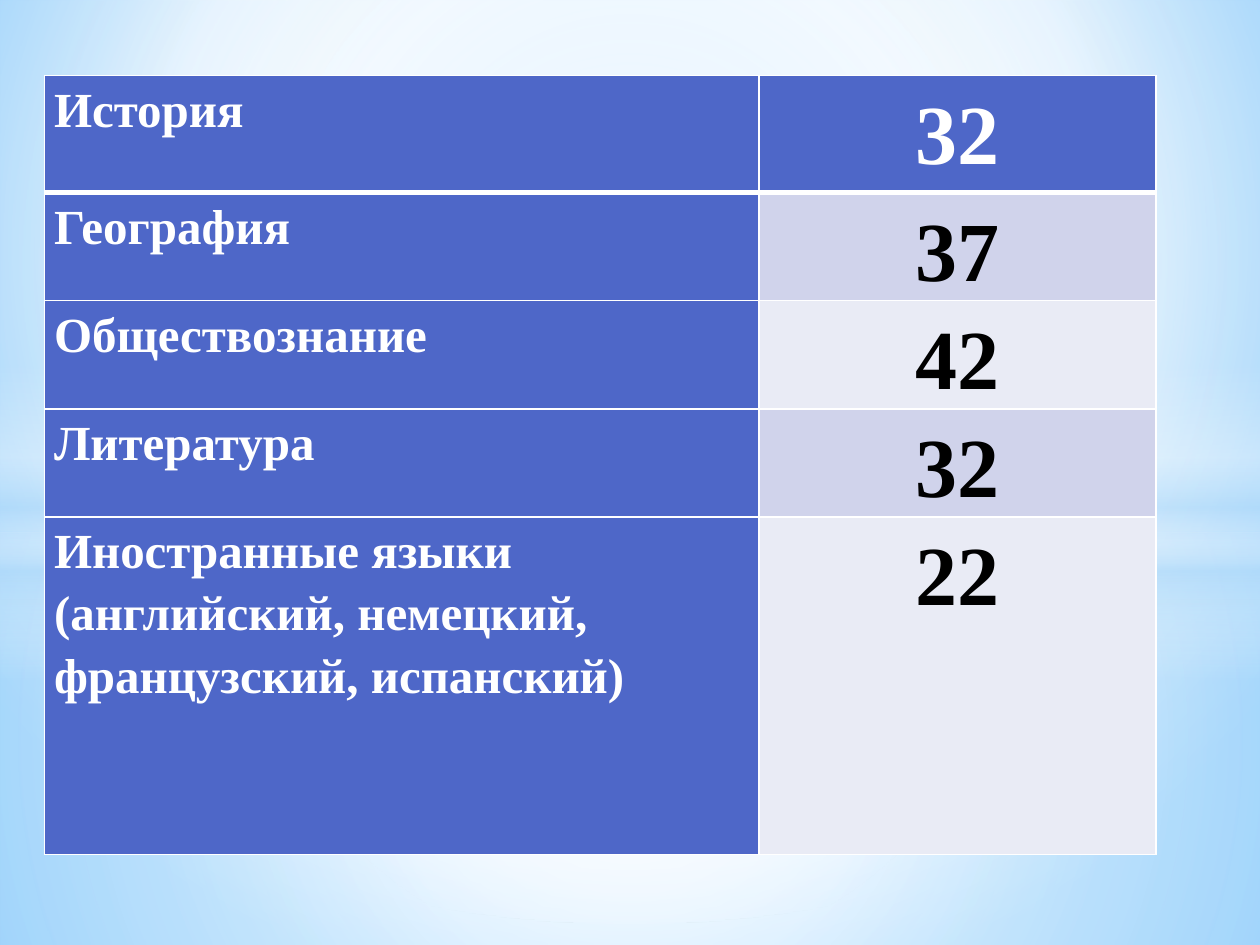
from lxml.etree import SubElement
from pptx import Presentation
from pptx.dml.color import RGBColor
from pptx.enum.shapes import MSO_SHAPE as SHAPE
from pptx.enum.text import PP_ALIGN as ALIGN
from pptx.oxml import parse_xml
from pptx.oxml.ns import nsdecls, qn
from pptx.util import Cm, Pt

WHITE = RGBColor(0xFF, 0xFF, 0xFF)
BLACK = RGBColor(0x00, 0x00, 0x00)
INDIGO = RGBColor(0x4E, 0x67, 0xC8)
LILAC = RGBColor(0xD0, 0xD3, 0xEB)
PALE = RGBColor(0xE9, 0xEB, 0xF5)
SKY = RGBColor(0x9E, 0xD5, 0xFF)
AZURE = RGBColor(0x5B, 0xB9, 0xFF)
MIST = RGBColor(0xB4, 0xDC, 0xFA)

CENTER = (50, 50, 50, 50)
WIDTH, HEIGHT = 25.4, 19.05
SUBJECTS = [
    ("История", "32", 2.36),
    ("География", "37", 2.18),
    ("Обществознание", "42", 2.18),
    ("Литература", "32", 2.18),
    ("Иностранные языки (английский, немецкий, французский, испанский)", "22", 6.81),
]


class Deck:
    """Holds the text style and the current slide."""

    font = {"name": "Times New Roman", "bold": True}
    margins = {"margin_left": Cm(0.19), "margin_right": Cm(0.19),
               "margin_top": 0, "margin_bottom": 0}

    def __init__(self):
        self.prs = Presentation()
        self.prs.slide_width, self.prs.slide_height = Cm(WIDTH), Cm(HEIGHT)
        self.s = self.prs.slides.add_slide(self.prs.slide_layouts[6])

    def gradient(self, fill, parent, stops, focus=None):
        fill.background()
        grad = parse_xml(f'<a:gradFill {nsdecls("a")} rotWithShape="1"/>')
        stop_list = SubElement(grad, qn("a:gsLst"))
        for pos, color, alpha in stops:
            stop = SubElement(stop_list, qn("a:gs"), pos=str(pos * 1000))
            rgb = SubElement(stop, qn("a:srgbClr"), val=str(color))
            if alpha < 100:
                SubElement(rgb, qn("a:alpha"), val=str(alpha * 1000))
        if focus:
            shade = SubElement(grad, qn("a:path"), path="circle")
            sides = {side: str(v * 1000) for side, v in zip("ltrb", focus)}
            SubElement(shade, qn("a:fillToRect"), **sides)
        else:
            SubElement(grad, qn("a:lin"), ang="5400000", scaled="0")
        parent.replace(parent.find(qn("a:noFill")), grad)

    def background(self, stops, focus):
        fill = self.s.background.fill
        fill.background()
        self.gradient(fill, self.s.element.find(".//" + qn("p:bgPr")), stops, focus)

    def glow(self, kind, top, height, stops, focus=None):
        sp = self.s.shapes.add_shape(kind, 0, Cm(top), Cm(WIDTH), Cm(height))
        sp.shadow.inherit = False
        sp.line.fill.background()
        self.gradient(sp.fill, sp.element.spPr, stops, focus)

    def cell(self, cell, text, size, color, fill, align, bottom, top):
        for name, value in self.margins.items():
            setattr(cell, name, value)
        p = cell.text_frame.paragraphs[0]
        p.alignment, p.line_spacing = align, 1.15
        r = p.add_run()
        r.text = text
        for name, value in {**self.font, "size": Pt(size)}.items():
            setattr(r.font, name, value)
        r.font.color.rgb = color
        tc_pr = cell._tc.get_or_add_tcPr()
        for side, width in {"L": 1, "R": 1, "T": top, "B": bottom}.items():
            ln = SubElement(tc_pr, qn(f"a:ln{side}"), w=str(Pt(width)))
            solid = SubElement(ln, qn("a:solidFill"))
            SubElement(solid, qn("a:srgbClr"), val=str(WHITE))
        cell.fill.solid()
        cell.fill.fore_color.rgb = fill

    def table(self, left, top, widths, rows):
        height = sum(row[2] for row in rows)
        table = self.s.shapes.add_table(len(rows), len(widths), Cm(left), Cm(top),
                                        Cm(sum(widths)), Cm(height)).table
        for col, width in zip(table.columns, widths):
            col.width = Cm(width)
        for i, (subject, score, row_height) in enumerate(rows):
            table.rows[i].height = Cm(row_height)
            bottom, upper = (3 if i == 0 else 1), (3 if i == 1 else 1)
            band = INDIGO if i == 0 else (LILAC if i % 2 else PALE)
            self.cell(table.cell(i, 0), subject, 28, WHITE, INDIGO, ALIGN.LEFT, bottom, upper)
            self.cell(table.cell(i, 1), score, 48, BLACK if i else WHITE, band,
                      ALIGN.CENTER, bottom, upper)


def main():
    deck = Deck()
    deck.background([(0, SKY, 100), (60, WHITE, 100), (100, AZURE, 100)], (20, 10, 20, 60))
    deck.glow(SHAPE.RECTANGLE, 10.74, 8.31,
              [(0, WHITE, 91), (37, WHITE, 76), (100, MIST, 79)], CENTER)
    deck.glow(SHAPE.RECTANGLE, 0, 10.74,
              [(0, WHITE, 89), (48, WHITE, 62), (100, MIST, 79)], CENTER)
    deck.glow(SHAPE.RECTANGLE, 7.37, 6.35,
              [(0, WHITE, 0), (29, WHITE, 30), (45, MIST, 40),
               (55, WHITE, 26), (65, MIST, 60), (100, WHITE, 0)])
    deck.glow(SHAPE.OVAL, 4.45, 14.17, [(0, WHITE, 100), (54, WHITE, 0)], CENTER)
    deck.table(0.9, 1.52, [14.4, 8], SUBJECTS)
    deck.prs.save("out.pptx")


if __name__ == "__main__":
    main()
